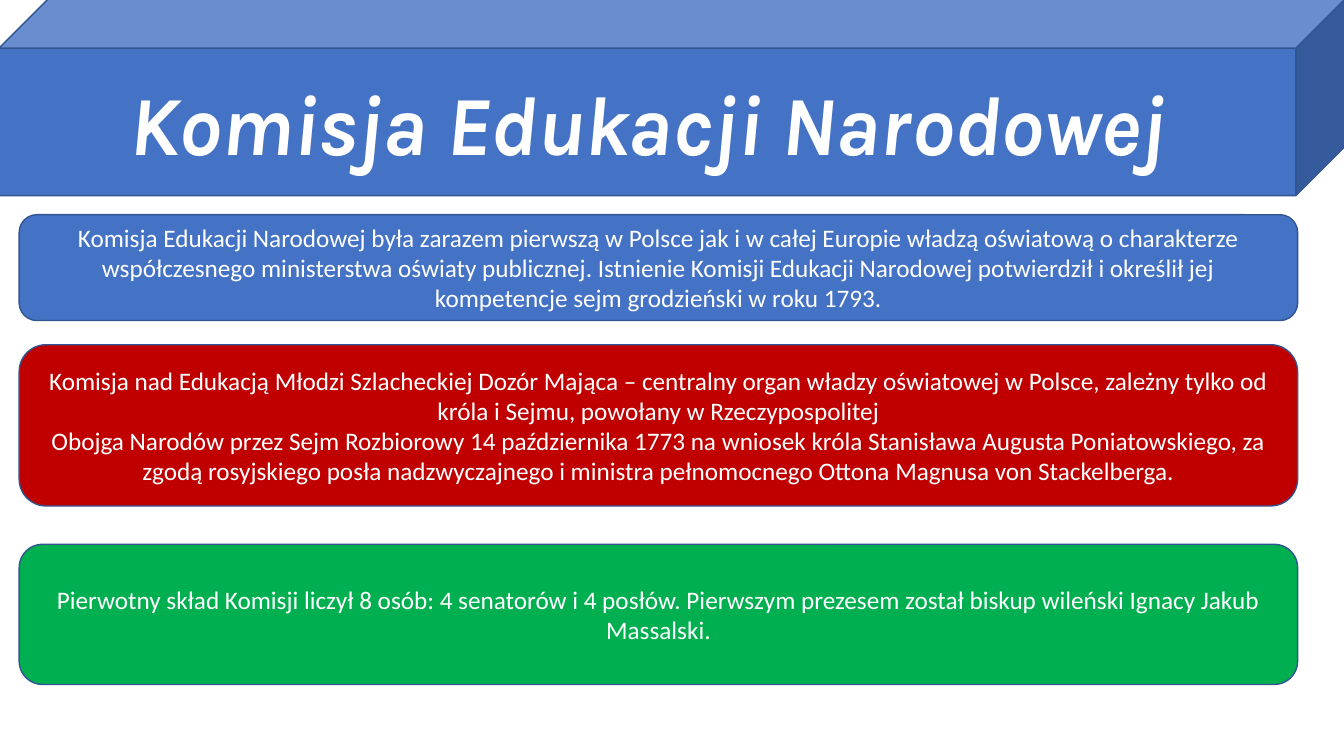
from pptx import Presentation
from pptx import util as u
from pptx.dml import color
from pptx.enum import shapes, text

WIDTH, HEIGHT = 13.33, 7.5
WHITE, BLUE, RED, GREEN, OUTLINE = "FFFFFF", "4472C4", "C00000", "00B050", "325491"
TITLE = "Komisja Edukacji Narodowej"
PANELS = [
    (2.13, 1.05, BLUE,
     "Komisja Edukacji Narodowej była zarazem pierwszą w Polsce jak i w całej Europie "
     "władzą oświatową o charakterze współczesnego ministerstwa oświaty publicznej. "
     "Istnienie Komisji Edukacji Narodowej potwierdził i określił jej kompetencje "
     "sejm grodzieński w roku 1793."),
    (3.42, 1.6, RED,
     "Komisja nad Edukacją Młodzi Szlacheckiej Dozór Mająca – centralny organ władzy "
     "oświatowej w Polsce, zależny tylko od króla i Sejmu, powołany w Rzeczypospolitej\n"
     "Obojga Narodów przez Sejm Rozbiorowy 14 października 1773 na wniosek króla "
     "Stanisława Augusta Poniatowskiego, za zgodą rosyjskiego posła nadzwyczajnego "
     "i ministra pełnomocnego Ottona Magnusa von Stackelberga."),
    (5.4, 1.39, GREEN,
     "Pierwotny skład Komisji liczył 8 osób: 4 senatorów i 4 posłów. Pierwszym prezesem "
     "został biskup wileński Ignacy Jakub Massalski."),
]


def paint(target, value):
    """Give a colour format the colour of a hex string."""
    target.rgb = color.RGBColor.from_string(value)


def add_block(page, kind, box, fill, words, font, size, strong=False):
    """Place a filled, outlined shape with centred white text in the box."""
    block = page.shapes.add_shape(kind, *(u.Inches(length) for length in box))
    block.shadow.inherit = False
    block.fill.solid()
    paint(block.fill.fore_color, fill)
    paint(block.line.color, OUTLINE)
    block.line.width = u.Pt(1)
    frame = block.text_frame
    frame.word_wrap = True
    frame.vertical_anchor = text.MSO_ANCHOR.MIDDLE
    frame.text = words
    for para in frame.paragraphs:
        para.alignment = text.PP_ALIGN.CENTER
        for span in para.runs:
            span.font.name = font
            span.font.size = u.Pt(size)
            span.font.bold = span.font.italic = strong
            paint(span.font.color, WHITE)


def add_panels(page, left, width):
    """Stack the coloured text panels in one column."""
    for top, height, fill, words in PANELS:
        add_block(page, shapes.MSO_SHAPE.ROUNDED_RECTANGLE,
                  (left, top, width, height), fill, words, "Calibri", 18)


def add_banner(page, box):
    """Place the title on a three-dimensional bar."""
    add_block(page, shapes.MSO_SHAPE.CUBE, box, BLUE, TITLE, "Karla", 60, strong=True)


def main():
    """Build and save the one-slide deck."""
    deck = Presentation()
    deck.slide_width, deck.slide_height = u.Inches(WIDTH), u.Inches(HEIGHT)
    page = deck.slides.add_slide(deck.slide_layouts[6])
    add_panels(page, 0.19, 12.68)
    add_banner(page, (-0.01, -0.01, WIDTH + 0.02, 1.95))
    deck.save("out.pptx")


if __name__ == "__main__":
    main()
